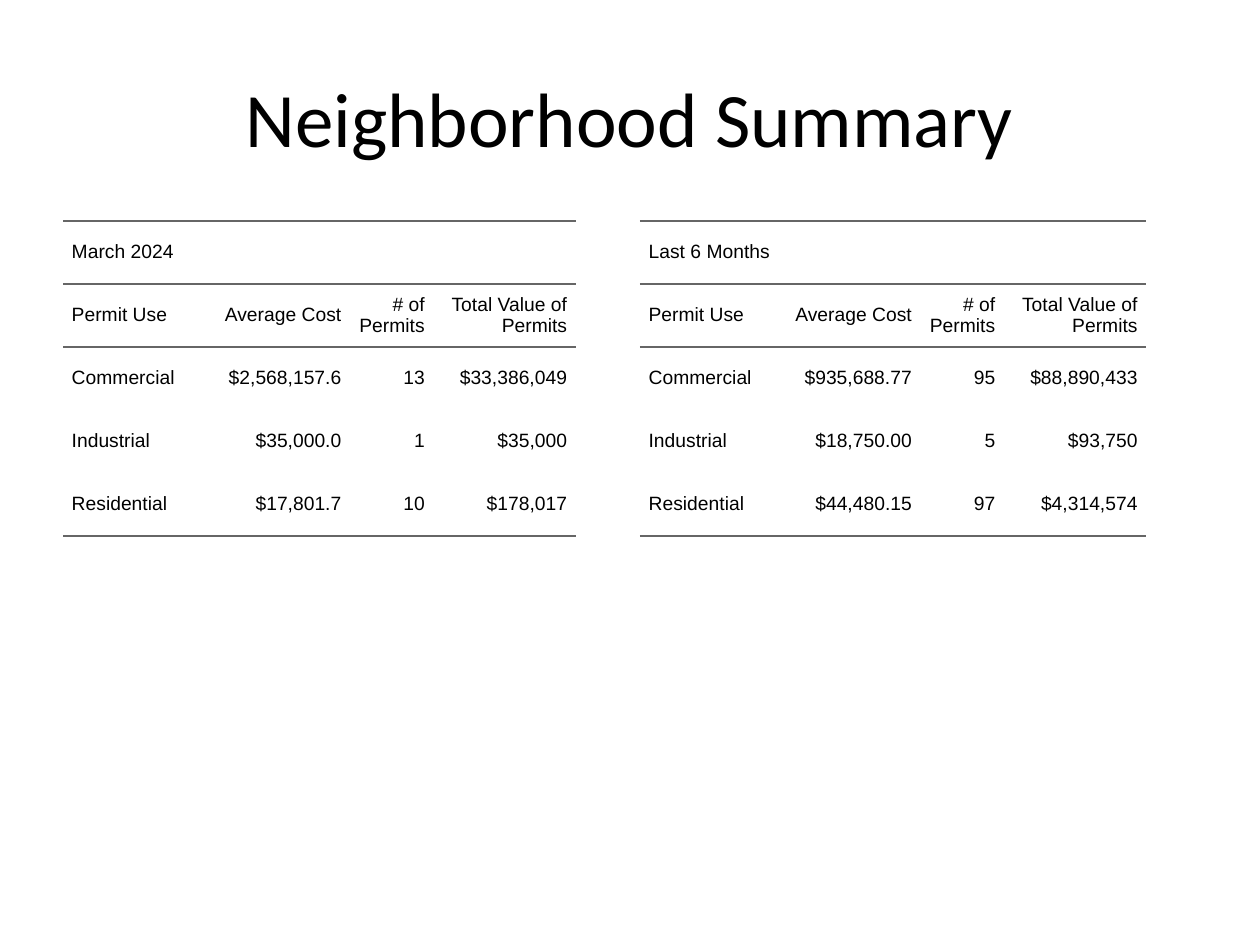
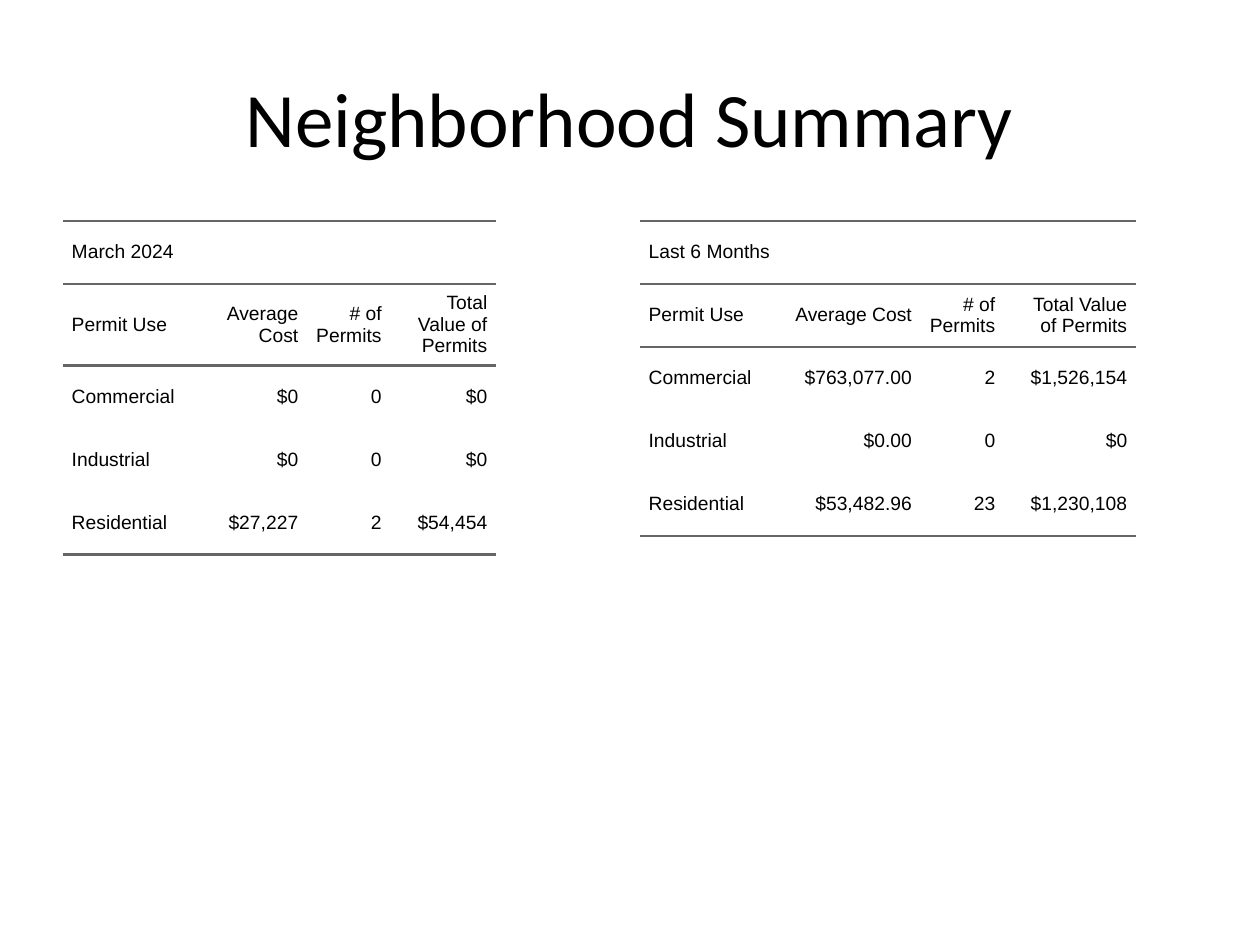
from dataclasses import dataclass

from lxml import etree
from pptx import Presentation
from pptx.dml.color import RGBColor
from pptx.enum.text import MSO_ANCHOR, PP_ALIGN
from pptx.oxml.ns import qn
from pptx.util import Cm, Pt

MIDDLE = MSO_ANCHOR.MIDDLE
LEFT, CENTER, RIGHT = PP_ALIGN.LEFT, PP_ALIGN.CENTER, PP_ALIGN.RIGHT
TITLE_ONLY = 5


@dataclass(frozen=True)
class Theme:
    """Colours, fonts, sizes and spacing shared by the slides."""

    ink: RGBColor = RGBColor(0x00, 0x00, 0x00)
    rule: str = "666666"
    rule_width: Pt = Pt(1.5)
    title_font: str = "Calibri"
    title_size: Pt = Pt(44)
    body_font: str = "Arial"
    body_size: Pt = Pt(11)
    padding: Pt = Pt(5)
    row_height: Cm = Cm(1.27)


THEME = Theme()
TITLE = "Neighborhood Summary"
TITLE_BOX = (Cm(1.27), Cm(0.76), Cm(22.86), Cm(3.18))
TABLE_TOP = Cm(4.45)
PERIODS = (("March 2024", Cm(1.27)), ("Last 6 Months", Cm(12.9)))
HEADINGS = ("Permit Use", "Average Cost", "# of Permits", "Total Value of Permits")
USES = ("Commercial", "Industrial", "Residential")
USE_WIDTH, COUNT_WIDTH = 2.79, 1.68

NEIGHBORHOODS = (
    (
        (3.0, 2.87, (("$2,568,157.6", "13", "$33,386,049"),
                     ("$35,000.0", "1", "$35,000"),
                     ("$17,801.7", "10", "$178,017"))),
        (2.87, 2.87, (("$935,688.77", "95", "$88,890,433"),
                      ("$18,750.00", "5", "$93,750"),
                      ("$44,480.15", "97", "$4,314,574"))),
    ),
    (
        (2.13, 2.13, (("$0", "0", "$0"),
                      ("$0", "0", "$0"),
                      ("$27,227", "2", "$54,454"))),
        (2.87, 2.66, (("$763,077.00", "2", "$1,526,154"),
                      ("$0.00", "0", "$0"),
                      ("$53,482.96", "23", "$1,230,108"))),
    ),
)


def add_run(paragraph, text, font, size):
    """Add one run in the theme's ink."""
    run = paragraph.add_run()
    run.text = text
    run.font.name = font
    run.font.size = size
    run.font.color.rgb = THEME.ink


def set_borders(cell, ruled_sides):
    """Rule the given sides of a cell and clear the others."""
    properties = cell._tc.get_or_add_tcPr()
    for side in "LRTB":
        border = etree.SubElement(properties, qn(f"a:ln{side}"), w=str(THEME.rule_width))
        if side in ruled_sides:
            fill = etree.SubElement(border, qn("a:solidFill"))
            etree.SubElement(fill, qn("a:srgbClr"), val=THEME.rule)
        else:
            etree.SubElement(border, qn("a:noFill"))


def format_cell(cell, ruled_sides):
    """Give a cell its borders, clear fill, anchor and margins."""
    set_borders(cell, ruled_sides)
    cell.fill.background()
    cell.vertical_anchor = MIDDLE
    cell.margin_left = cell.margin_right = 0
    cell.margin_top = cell.margin_bottom = THEME.padding


def write_cell(cell, text, alignment):
    """Write one padded line of body text into a cell."""
    paragraph = cell.text_frame.paragraphs[0]
    paragraph.alignment = alignment
    paragraph.space_before = paragraph.space_after = THEME.padding
    indents = paragraph._p.get_or_add_pPr()
    for margin in ("marL", "marR"):
        indents.set(margin, str(THEME.padding))
    add_run(paragraph, text, THEME.body_font, THEME.body_size)


def add_title(slide, box):
    """Place and format the slide title."""
    title = slide.shapes.title
    title.left, title.top, title.width, title.height = box
    title.text_frame.vertical_anchor = MIDDLE
    paragraph = title.text_frame.paragraphs[0]
    paragraph.alignment = CENTER
    add_run(paragraph, TITLE, THEME.title_font, THEME.title_size)


def add_permit_table(slide, left, top, period, cost_width, value_width, figures):
    """Add the permit table of one period at the given corner."""
    rows = [(period,), HEADINGS] + [(use, *row) for use, row in zip(USES, figures)]
    widths = [Cm(width) for width in (USE_WIDTH, cost_width, COUNT_WIDTH, value_width)]
    permits = slide.shapes.add_table(
        len(rows), len(widths), left, top, sum(widths), THEME.row_height * len(rows)
    ).table
    permits.first_row = permits.horz_banding = False
    for column, width in zip(permits.columns, widths):
        column.width = width
    permits.cell(0, 0).merge(permits.cell(0, len(widths) - 1))
    ruled = ["TB", "TB", "T"] + [""] * (len(rows) - 4) + ["B"]
    for r, texts in enumerate(rows):
        for c in range(len(widths)):
            format_cell(permits.cell(r, c), ruled[r])
        for c, text in enumerate(texts):
            write_cell(permits.cell(r, c), text, RIGHT if c else LEFT)


def add_summary_slide(deck, neighborhood):
    """Add one neighborhood's slide with a table for each period."""
    slide = deck.slides.add_slide(deck.slide_layouts[TITLE_ONLY])
    add_title(slide, TITLE_BOX)
    for (period, left), content in zip(PERIODS, neighborhood):
        add_permit_table(slide, left, TABLE_TOP, period, *content)


def main():
    """Build and save the deck."""
    deck = Presentation()
    deck.slide_width, deck.slide_height = Cm(25.4), Cm(19.05)
    for neighborhood in NEIGHBORHOODS:
        add_summary_slide(deck, neighborhood)
    deck.save("out.pptx")


if __name__ == "__main__":
    main()
